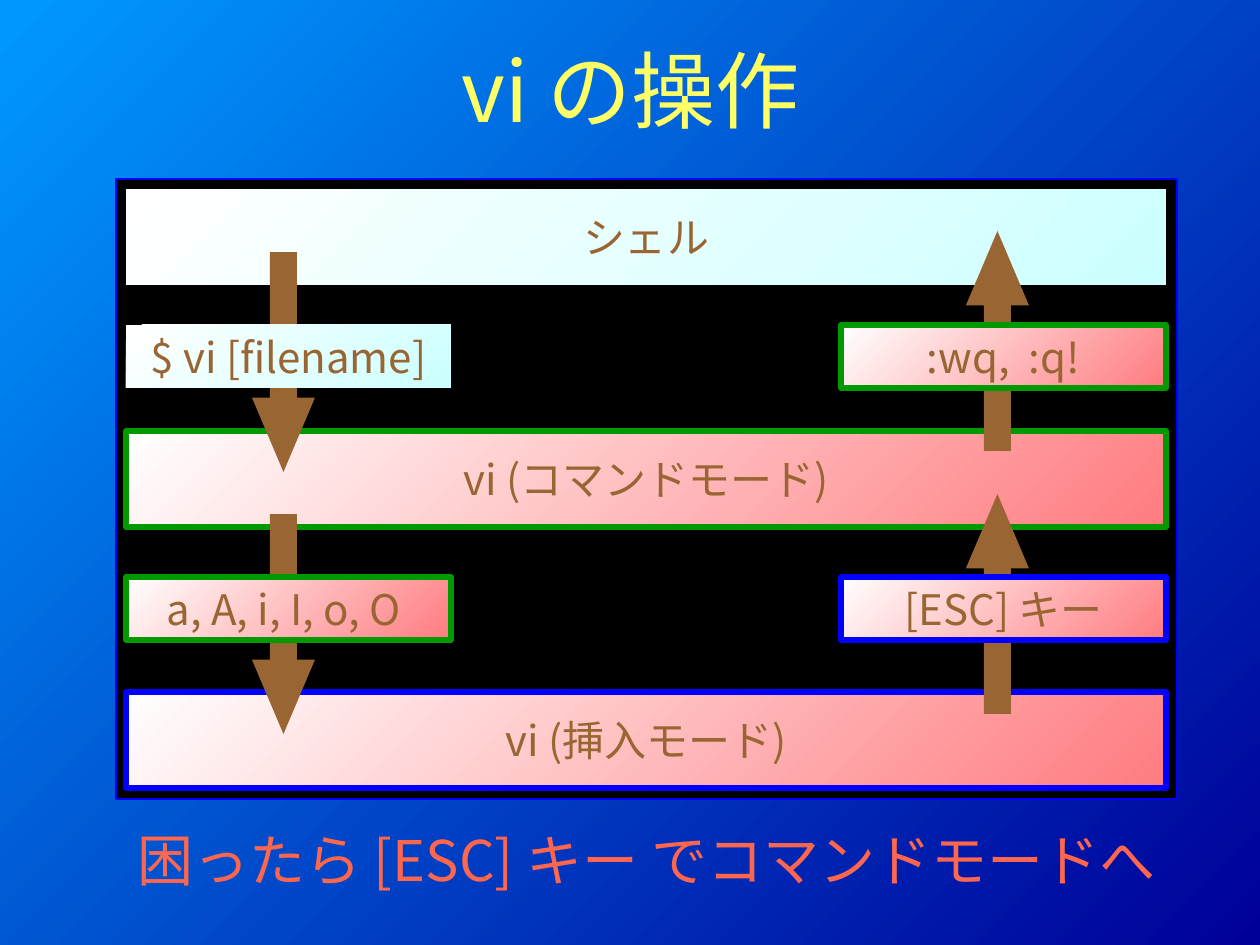
from dataclasses import dataclass
from typing import Optional

import pptx
import pptx.dml.color
import pptx.enum.dml
import pptx.enum.shapes
import pptx.enum.text
import pptx.oxml.ns
import pptx.util
from lxml import etree

EMU_PER_PX = 914400 / 126
FONT = "Noto Sans CJK JP"
COLORS = {
    "sky": "0099FF", "navy": "000099", "title": "FFFF66", "hint": "FE674E",
    "panel": "000000", "blue": "0000FF", "green": "009900", "brown": "996633",
    "white": "FFFFFF", "cyan": "CCFFFF", "pink": "FF7C80",
}
SHAPES = pptx.enum.shapes.MSO_SHAPE

# Grid of the diagram, in px
LEFT, FULL_WIDTH, ROW_HEIGHT = 126, 1040, 96
LABEL_WIDTH, LABEL_HEIGHT = 325, 63
RIGHT = LEFT + FULL_WIDTH - LABEL_WIDTH
UPPER, LOWER = 325, 577
ARROW_WIDTH, ARROW_HEIGHT = 63, 220
DOWN_X, UP_X = 252, 966


@dataclass
class Box:
    text: str
    x: int
    y: int
    width: int
    height: int
    tint: str
    border: Optional[str] = None


@dataclass
class Arrow:
    x: int
    y: int
    upward: bool = False


ROWS = [
    Box("シェル", LEFT, 189, FULL_WIDTH, ROW_HEIGHT, "cyan"),
    Box("vi (コマンドモード)", LEFT, 431, FULL_WIDTH, ROW_HEIGHT, "pink", "green"),
    Box("vi (挿入モード)", LEFT, 692, FULL_WIDTH, ROW_HEIGHT, "pink", "blue"),
]
ARROWS = [
    Arrow(DOWN_X, 252), Arrow(DOWN_X, 514),
    Arrow(UP_X, 494, upward=True), Arrow(UP_X, 231, upward=True),
]
LABELS = [
    Box("a, A, i, I, o, O ", LEFT, LOWER, LABEL_WIDTH, LABEL_HEIGHT, "pink", "green"),
    Box("$ vi [filename]", LEFT, UPPER, LABEL_WIDTH, LABEL_HEIGHT, "cyan"),
    Box("[ESC] キー", RIGHT, LOWER, LABEL_WIDTH, LABEL_HEIGHT, "pink", "blue"),
    Box(":wq,  :q!", RIGHT, UPPER, LABEL_WIDTH, LABEL_HEIGHT, "pink", "green"),
]


def px(value: int) -> pptx.util.Emu:
    return pptx.util.Emu(round(value * EMU_PER_PX))


def rgb(name: str) -> pptx.dml.color.RGBColor:
    return pptx.dml.color.RGBColor.from_string(COLORS[name])


def fill_gradient(fill, start: str, end: str) -> None:
    """Blend from the top left to the bottom right."""
    fill.gradient()
    fill.gradient_angle = 315
    for stop, name in zip(fill.gradient_stops, (start, end)):
        stop.color.rgb = rgb(name)


def write_text(shape, text: str, *, size: int, color: str, wrap: bool = True,
               anchor=pptx.enum.text.MSO_ANCHOR.MIDDLE) -> None:
    frame = shape.text_frame
    frame.auto_size = pptx.enum.text.MSO_AUTO_SIZE.NONE
    frame.word_wrap = wrap
    frame.vertical_anchor = anchor
    paragraph = frame.paragraphs[0]
    paragraph.alignment = pptx.enum.text.PP_ALIGN.CENTER
    run = paragraph.add_run()
    run.text = text
    run.font.size = pptx.util.Pt(size)
    run.font.color.rgb = rgb(color)
    run.font.name = FONT
    # East Asian characters take their own typeface
    east_asian = etree.SubElement(run.font._element, pptx.oxml.ns.qn("a:ea"))
    east_asian.set("typeface", FONT)


def place(shape, x: int, y: int, width: int, height: int) -> None:
    shape.left, shape.top = px(x), px(y)
    shape.width, shape.height = px(width), px(height)


def add_preset(shapes, kind, x: int, y: int, width: int, height: int,
               border: Optional[str] = None, border_width: float = 3):
    shape = shapes.add_shape(kind, px(x), px(y), px(width), px(height))
    shape.shadow.inherit = False
    if border:
        shape.line.color.rgb = rgb(border)
        shape.line.width = pptx.util.Pt(border_width)
    else:
        shape.line.fill.background()
    return shape


def add_box(shapes, box: Box) -> None:
    shape = add_preset(shapes, SHAPES.FLOWCHART_PROCESS, box.x, box.y,
                       box.width, box.height, box.border)
    fill_gradient(shape.fill, "white", box.tint)
    write_text(shape, box.text, size=24, color="brown", wrap=False)


def add_arrow(shapes, arrow: Arrow) -> None:
    shape = add_preset(shapes, SHAPES.DOWN_ARROW, arrow.x, arrow.y,
                       ARROW_WIDTH, ARROW_HEIGHT)
    shape.fill.solid()
    shape.fill.fore_color.rgb = rgb("brown")
    shape.adjustments[0] = 0.43
    shape.adjustments[1] = 1.18
    if arrow.upward:
        shape._element.spPr.xfrm.set("flipV", "1")


def main() -> None:
    presentation = pptx.Presentation()
    presentation.slide_width, presentation.slide_height = px(1260), px(945)
    slide = presentation.slides.add_slide(presentation.slide_layouts[1])
    fill_gradient(slide.background.fill, "sky", "navy")

    # Title and closing hint
    title, body = slide.placeholders
    place(title, 95, 10, 1071, 158)
    write_text(title, "vi の操作", size=48, color="title")
    place(body, 32, 819, 1229, 105)
    write_text(body, "困ったら [ESC] キー でコマンドモードへ", size=32, color="hint",
               anchor=pptx.enum.text.MSO_ANCHOR.TOP)
    properties = body.text_frame.paragraphs[0]._p.get_or_add_pPr()
    etree.SubElement(properties, pptx.oxml.ns.qn("a:buNone"))

    # Mode diagram: panel, rows, arrows, then the labels over the arrows
    diagram = slide.shapes.add_group_shape().shapes
    panel = add_preset(diagram, SHAPES.RECTANGLE, 116, 179, 1061, 620, "blue", 1.5)
    panel.fill.solid()
    panel.fill.fore_color.rgb = rgb("panel")
    for row in ROWS:
        add_box(diagram, row)
    for arrow in ARROWS:
        add_arrow(diagram, arrow)
    for label in LABELS:
        add_box(diagram, label)

    presentation.save("out.pptx")


if __name__ == "__main__":
    main()
